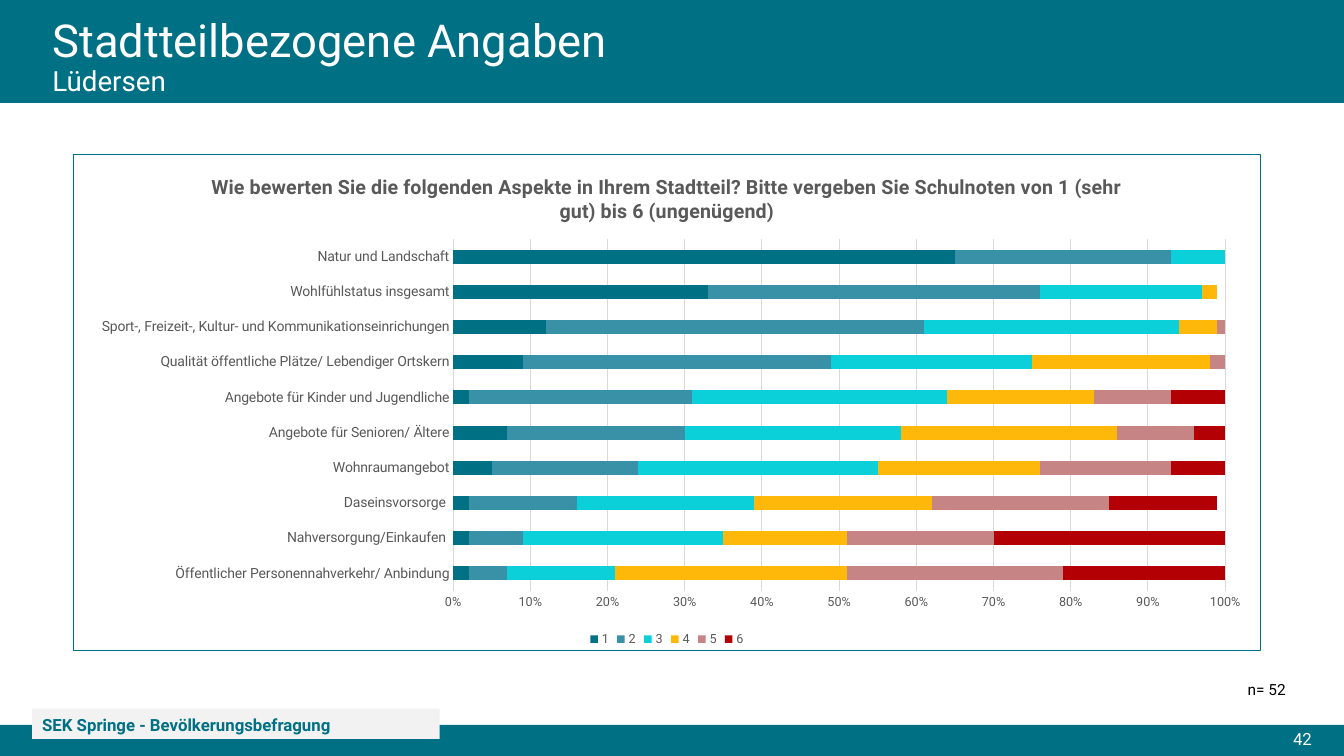
from dataclasses import dataclass

from lxml import etree
from pptx import Presentation
from pptx.chart.chart import Chart
from pptx.chart.data import CategoryChartData
from pptx.dml.color import RGBColor
from pptx.enum.chart import XL_CHART_TYPE, XL_LEGEND_POSITION, XL_TICK_MARK
from pptx.enum.shapes import MSO_SHAPE
from pptx.enum.text import MSO_ANCHOR, PP_ALIGN
from pptx.oxml import parse_xml
from pptx.oxml.ns import nsdecls, qn
from pptx.slide import Slide
from pptx.text.text import Font
from pptx.util import Inches, Pt

RECT = MSO_SHAPE.RECTANGLE
STACKED = XL_CHART_TYPE.BAR_STACKED
BOTTOM = XL_LEGEND_POSITION.BOTTOM
NO_TICK = XL_TICK_MARK.NONE
TOP, MIDDLE = MSO_ANCHOR.TOP, MSO_ANCHOR.MIDDLE
LEFT, RIGHT = PP_ALIGN.LEFT, PP_ALIGN.RIGHT

FACE = "Roboto"
TEAL = RGBColor(0x00, 0x70, 0x85)
PALE = RGBColor(0xF2, 0xF2, 0xF2)
WHITE = RGBColor(0xFF, 0xFF, 0xFF)
BLACK = RGBColor(0x00, 0x00, 0x00)
GREY = RGBColor(0x59, 0x59, 0x59)
GRID = RGBColor(0xD9, 0xD9, 0xD9)

WIDE, HIGH = Inches(13.33), Inches(7.5)


@dataclass(frozen=True)
class Box:
    """A frame in percent of the slide's width and height."""
    x: float
    y: float
    w: float
    h: float

    def place(self) -> tuple[int, int, int, int]:
        return (int(WIDE * self.x / 100), int(HIGH * self.y / 100),
                int(WIDE * self.w / 100), int(HIGH * self.h / 100))


@dataclass(frozen=True)
class Bar:
    box: Box
    fill: RGBColor


@dataclass(frozen=True)
class Label:
    box: Box
    lines: tuple[tuple[str, float], ...]
    color: RGBColor
    align: PP_ALIGN = LEFT
    anchor: MSO_ANCHOR = MIDDLE
    bold: bool = False
    space: float = 1.0


@dataclass(frozen=True)
class Grade:
    name: str
    color: RGBColor
    vals: tuple[float, ...]


TAG = Box(2.4, 93.73, 30.31, 4)
BARS = (
    Bar(Box(0, 0, 100, 13.6), TEAL),
    Bar(Box(0, 95.87, 100, 4.13), TEAL),
    Bar(TAG, PALE),
)
LABELS = (
    Label(Box(65.42, 95.73, 32.93, 4), (("42", 12),), WHITE, RIGHT),
    Label(TAG, (("SEK Springe - Bevölkerungsbefragung", 12),), TEAL,
          bold=True, space=1.07),
    Label(Box(3.15, 2.8, 86.27, 9.73),
          (("Stadtteilbezogene Angaben", 32.4), ("Lüdersen", 19.8)),
          WHITE, space=0.9),
    Label(Box(91.82, 89.33, 4.58, 3.87), (("n= 52", 11),), BLACK, RIGHT, TOP),
)

FRAME = Box(5.4, 20.4, 88.45, 65.73)
PLOT = {"x": 0.32, "y": 0.17, "w": 0.65, "h": 0.71}
TITLE = ("Wie bewerten Sie die folgenden Aspekte in Ihrem Stadtteil? "
         "Bitte vergeben Sie Schulnoten von 1 (sehr gut) bis 6 (ungenügend)")
TOPICS = (
    "Öffentlicher Personennahverkehr/ Anbindung",
    "Nahversorgung/Einkaufen ",
    "Daseinsvorsorge ",
    "Wohnraumangebot",
    "Angebote für Senioren/ Ältere",
    "Angebote für Kinder und Jugendliche",
    "Qualität öffentliche Plätze/ Lebendiger Ortskern",
    "Sport-, Freizeit-, Kultur- und Kommunikationseinrichungen",
    "Wohlfühlstatus insgesamt",
    "Natur und Landschaft",
)
GRADES = (
    Grade("1", TEAL,
          (0.02, 0.02, 0.02, 0.05, 0.07, 0.02, 0.09, 0.12, 0.33, 0.65)),
    Grade("2", RGBColor(0x38, 0x91, 0xA7),
          (0.05, 0.07, 0.14, 0.19, 0.23, 0.29, 0.4, 0.49, 0.43, 0.28)),
    Grade("3", RGBColor(0x0B, 0xD0, 0xD9),
          (0.14, 0.26, 0.23, 0.31, 0.28, 0.33, 0.26, 0.33, 0.21, 0.07)),
    Grade("4", RGBColor(0xFE, 0xB8, 0x0A),
          (0.3, 0.16, 0.23, 0.21, 0.28, 0.19, 0.23, 0.05, 0.02, 0)),
    Grade("5", RGBColor(0xC7, 0x84, 0x84),
          (0.28, 0.19, 0.23, 0.17, 0.1, 0.1, 0.02, 0.02, 0, 0)),
    Grade("6", RGBColor(0xB2, 0x00, 0x05),
          (0.21, 0.3, 0.14, 0.07, 0.05, 0.07, 0, 0, 0, 0)),
)


def set_font(font: Font, size: float, color: RGBColor,
             bold: bool = False) -> None:
    font.name, font.size, font.bold = FACE, Pt(size), bold
    font.color.rgb = color


def add_bar(slide: Slide, bar: Bar) -> None:
    shape = slide.shapes.add_shape(RECT, *bar.box.place())
    shape.shadow.inherit = False
    shape.fill.solid()
    shape.fill.fore_color.rgb = bar.fill
    shape.line.fill.background()


def add_label(slide: Slide, label: Label) -> None:
    frame = slide.shapes.add_textbox(*label.box.place()).text_frame
    frame.word_wrap = True
    frame.vertical_anchor = label.anchor
    para = frame.paragraphs[0]
    para.alignment, para.line_spacing = label.align, label.space
    set_font(para.font, label.lines[0][1], label.color, label.bold)
    for row, (text, size) in enumerate(label.lines):
        if row:
            para.add_line_break()
        run = para.add_run()
        run.text = text
        run.font.size = Pt(size)


def fix_plot(chart: Chart) -> None:
    """Pin the inner plot area, in shares of the chart."""
    area = chart._chartSpace.chart.plotArea
    for old in area.findall(qn("c:layout")):
        area.remove(old)
    layout = etree.Element(qn("c:layout"))
    manual = etree.SubElement(layout, qn("c:manualLayout"))
    modes = {"layoutTarget": "inner", "xMode": "edge", "yMode": "edge"}
    for tag, val in (modes | PLOT).items():
        etree.SubElement(manual, qn(f"c:{tag}")).set("val", str(val))
    area.insert(0, layout)


def add_border(chart: Chart) -> None:
    chart._chartSpace.chart.addnext(parse_xml(
        f'<c:spPr {nsdecls("c", "a")}><a:noFill/><a:ln w="{Pt(0.75)}">'
        f'<a:solidFill><a:srgbClr val="{TEAL}"/></a:solidFill></a:ln></c:spPr>'))


def add_grades(slide: Slide) -> None:
    data = CategoryChartData(number_format="0%")
    data.categories = TOPICS
    for grade in GRADES:
        data.add_series(grade.name, grade.vals)
    chart = slide.shapes.add_chart(STACKED, *FRAME.place(), data).chart
    set_font(chart.font, 10, BLACK)
    title = chart.chart_title.text_frame
    title.text = TITLE
    set_font(title.paragraphs[0].font, 14, GREY, True)
    chart.has_legend = True
    chart.legend.position = BOTTOM
    chart.legend.include_in_layout = False
    set_font(chart.legend.font, 9, GREY)

    plot = chart.plots[0]
    plot.gap_width, plot.overlap, plot.vary_by_categories = 150, 100, False
    for series, grade in zip(plot.series, GRADES):
        series.format.fill.solid()
        series.format.fill.fore_color.rgb = grade.color

    cat, val = chart.category_axis, chart.value_axis
    for axis, size in ((cat, 10), (val, 9)):
        axis.major_tick_mark = axis.minor_tick_mark = NO_TICK
        set_font(axis.tick_labels.font, size, GREY)
    val.minimum_scale, val.maximum_scale, val.major_unit = 0, 1, 0.1
    val.tick_labels.number_format = "0%"
    val.tick_labels.number_format_is_linked = False
    val.format.line.fill.background()
    for line in (cat.format.line, val.major_gridlines.format.line):
        line.color.rgb, line.width = GRID, Pt(0.75)
    fix_plot(chart)
    add_border(chart)


def main() -> None:
    deck = Presentation()
    deck.slide_width, deck.slide_height = WIDE, HIGH
    slide = deck.slides.add_slide(deck.slide_layouts[6])
    for bar in BARS:
        add_bar(slide, bar)
    for label in LABELS:
        add_label(slide, label)
    add_grades(slide)
    deck.save("out.pptx")


if __name__ == "__main__":
    main()
